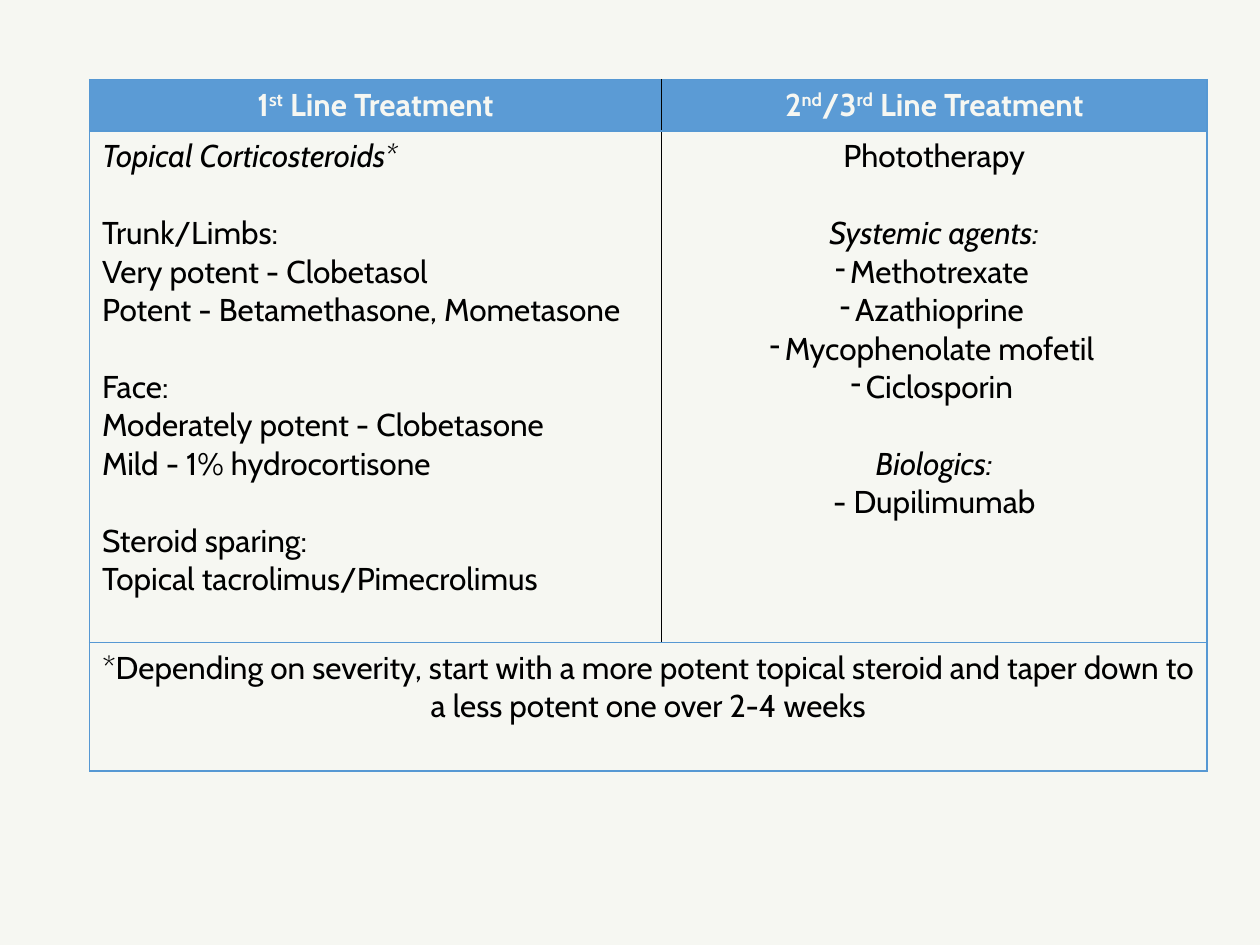
"""Builds a one-slide table of first-line and later treatments."""
from dataclasses import dataclass

from lxml.etree import SubElement
from pptx import Presentation
from pptx.dml.color import RGBColor as Rgb
from pptx.enum.text import PP_ALIGN as Align
from pptx.oxml.ns import qn
from pptx.util import Inches, Pt


@dataclass(frozen=True)
class Theme:
    font: str = "Cabin"
    size: int = 18
    line_gap: int = 22
    paper: str = "F6F7F2"
    ink: str = "000000"
    header: str = "5B9BD5"
    frame: str = "5698D3"
    frame_width: float = 0.75
    divider_width: float = 1


@dataclass(frozen=True)
class Line:
    wording: tuple
    italic: bool = False
    gap: bool = False
    dash: bool = False


def line(*wording, **style):
    return Line(wording, **style)


class TreatmentSlide:
    def __init__(self, deck, theme):
        self.theme = theme
        self.slide = deck.slides.add_slide(deck.slide_layouts[6])
        backdrop = self.slide.background.fill
        backdrop.solid()
        backdrop.fore_color.rgb = Rgb.from_string(theme.paper)

    def table(self, left, top, widths, heights):
        grid = self.slide.shapes.add_table(
            len(heights), len(widths), Inches(left), Inches(top),
            Inches(sum(widths)), Inches(sum(heights))).table
        for column, width in zip(grid.columns, widths):
            column.width = Inches(width)
        for row, height in zip(grid.rows, heights):
            row.height = Inches(height)
        return grid

    def borders(self, cell, divider=None):
        theme = self.theme
        properties = cell._tc.get_or_add_tcPr()
        for side in "LRTB":
            color, width = theme.frame, theme.frame_width
            if side == divider:
                color, width = theme.ink, theme.divider_width
            edge = SubElement(properties, qn(f"a:ln{side}"), w=str(Pt(width)))
            SubElement(SubElement(edge, qn("a:solidFill")), qn("a:srgbClr"), val=color)

    def fill(self, cell, color=None):
        if color:
            cell.fill.solid()
            cell.fill.fore_color.rgb = Rgb.from_string(color)
        else:
            cell.fill.background()

    def dash(self, paragraph):
        properties = paragraph._p.get_or_add_pPr()
        properties.set("marL", "0")
        properties.set("indent", str(-Inches(0.12)))
        SubElement(SubElement(properties, qn("a:buClr")), qn("a:srgbClr"), val=self.theme.ink)
        SubElement(properties, qn("a:buChar"), char="-")

    def text(self, cell, lines, color, align=Align.CENTER, bold=False):
        frame = cell.text_frame
        for index, entry in enumerate(lines):
            paragraph = frame.add_paragraph() if index else frame.paragraphs[0]
            paragraph.alignment = align
            if entry.gap:
                paragraph.space_before = Pt(self.theme.line_gap)
            if entry.dash:
                self.dash(paragraph)
            font = paragraph.font
            font.name, font.size = self.theme.font, Pt(self.theme.size)
            font.bold, font.italic = bold, entry.italic
            font.color.rgb = Rgb.from_string(color)
            for position, words in enumerate(entry.wording):
                run = paragraph.add_run()
                run.text = words
                if position % 2:
                    run.font._element.set("baseline", "30000")


HEADINGS = (
    [line("1", "st", " Line Treatment")],
    [line("2", "nd", "/3", "rd", " Line Treatment")],
)
FIRST_LINE = [
    line("Topical Corticosteroids*", italic=True),
    line("Trunk/Limbs:", gap=True),
    line("Very potent - Clobetasol"),
    line("Potent - Betamethasone, Mometasone"),
    line("Face:", gap=True),
    line("Moderately potent - Clobetasone"),
    line("Mild - 1% hydrocortisone"),
    line("Steroid sparing:", gap=True),
    line("Topical tacrolimus/Pimecrolimus"),
]
LATER_LINES = [
    line("Phototherapy"),
    line("Systemic agents:", italic=True, gap=True),
    *(line(agent, dash=True) for agent in (
        "Methotrexate", "Azathioprine", "Mycophenolate mofetil", "Ciclosporin")),
    line("Biologics:", italic=True, gap=True),
    line("- Dupilimumab"),
]
FOOTNOTE = [line("*Depending on severity, start with a more potent topical steroid "
                 "and taper down to a less potent one over 2-4 weeks")]


def main():
    theme = Theme()
    deck = Presentation()
    deck.slide_width, deck.slide_height = Inches(10), Inches(7.5)
    page = TreatmentSlide(deck, theme)
    grid = page.table(0.71, 0.63, (4.54, 4.33), (0.41, 4.06, 1.02))
    grid.cell(2, 0).merge(grid.cell(2, 1))

    for row in range(3):
        for column, divider in enumerate("RL"):
            cell = grid.cell(row, column)
            page.borders(cell, divider if row < 2 else None)
            page.fill(cell, theme.header if row == 0 else None)

    for column, heading in enumerate(HEADINGS):
        page.text(grid.cell(0, column), heading, theme.paper, bold=True)
    page.text(grid.cell(1, 0), FIRST_LINE, theme.ink, Align.LEFT)
    page.text(grid.cell(1, 1), LATER_LINES, theme.ink)
    page.text(grid.cell(2, 0), FOOTNOTE, theme.ink)
    deck.save("out.pptx")


if __name__ == "__main__":
    main()
